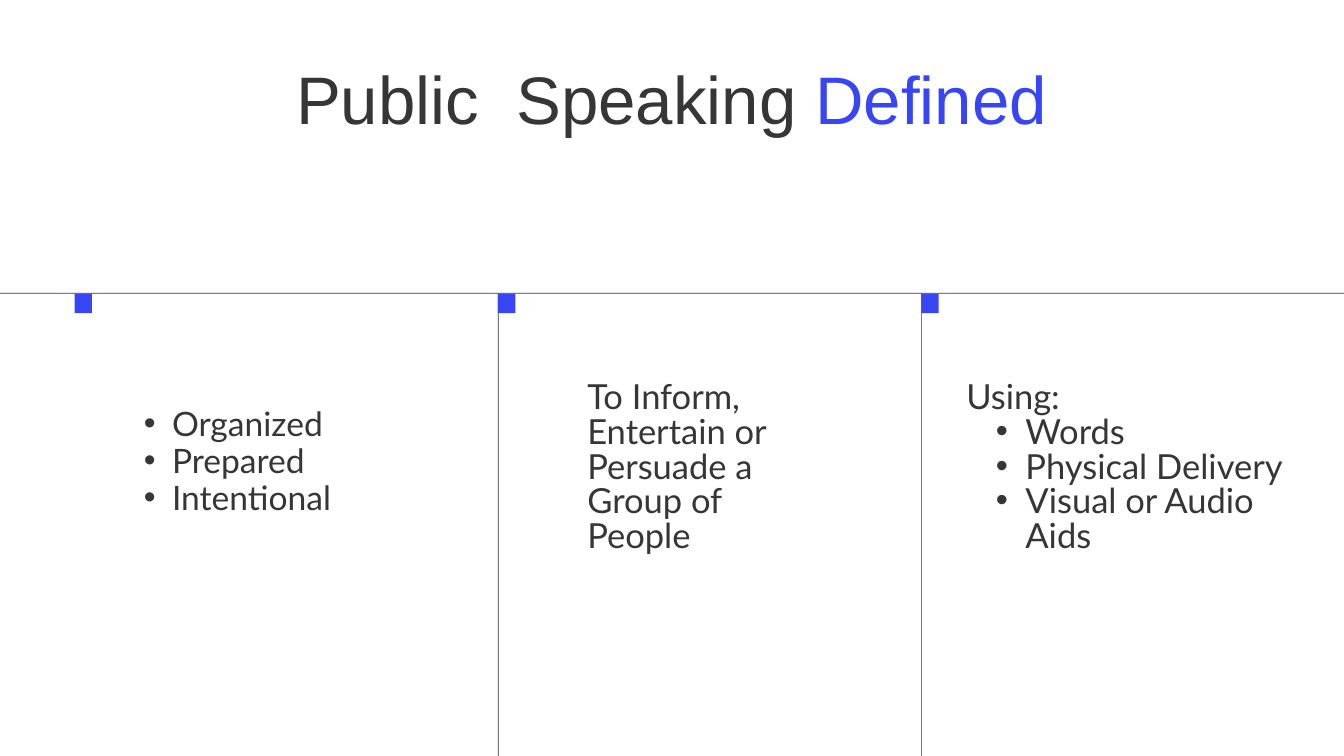
from lxml.etree import SubElement
from pptx import Presentation
from pptx.dml.color import RGBColor
from pptx.enum.shapes import MSO_SHAPE as Shape
from pptx.enum.text import MSO_AUTO_SIZE as AutoSize, PP_ALIGN as Align
from pptx.oxml.ns import qn
from pptx.util import Pt

PX = 9144  # EMU, 100 px to the inch
WIDTH, HEIGHT = 2000, 1125
INK = RGBColor(0x37, 0x36, 0x36)
BLUE = RGBColor(0x37, 0x45, 0xF4)

TITLE = [("Public  Speaking ", INK), ("Defined", BLUE)]
TITLE_BOX = (383, 96, 1233, 222)

# box, size (pt), line spacing (pt), bullet indent (px), [(line, is bulleted)]
COLUMNS = [
    ((172, 604, 568, 221), 36, 39.6, 42,
     [("Organized", True), ("Prepared", True), ("Intentional", True)]),
    ((874, 569, 335, 261), 37, 37, 0,
     [("To Inform, Entertain or Persuade a Group of People", False)]),
    ((1438, 569, 498, 312), 37, 37, 44,
     [("Using:", False), ("Words", True), ("Physical Delivery", True),
      ("Visual or Audio Aids", True)]),
]

RULE = 1
RULE_TOP = 436
COLUMN_TOP = RULE_TOP + RULE
FIRST_COLUMN, COLUMN_STEP = 111, 630
MARKER = (26, 29)


def emu(box):
    return [length * PX for length in box]


def add_block(slide, box, color):
    block = slide.shapes.add_shape(Shape.RECTANGLE, *emu(box))
    block.shadow.inherit = False
    block.fill.solid()
    block.fill.fore_color.rgb = color
    block.line.fill.background()


def add_frame(slide, box):
    """Add a wrapping text box without insets and return its text frame."""
    frame = slide.shapes.add_textbox(*emu(box)).text_frame
    frame.word_wrap = True
    frame.auto_size = AutoSize.SHAPE_TO_FIT_TEXT
    frame.margin_left = frame.margin_top = 0
    frame.margin_right = frame.margin_bottom = 0
    return frame


def add_bullet(paragraph, indent):
    paragraph.level = 1
    properties = paragraph._p.get_or_add_pPr()
    properties.set("marL", str(2 * indent * PX))
    properties.set("indent", str(-indent * PX))
    SubElement(properties, qn("a:buFont"), typeface="Arial")
    SubElement(properties, qn("a:buChar"), char="•")


def add_title(slide):
    heading = add_frame(slide, TITLE_BOX).paragraphs[0]
    heading.alignment = Align.CENTER
    heading.line_spacing = Pt(79.2)
    heading.font.size = Pt(72)
    heading.font.name = "Arial"
    for words, color in TITLE:
        run = heading.add_run()
        run.text = words
        run.font.size = Pt(72)
        run.font.name = "Arial"
        run.font.color.rgb = color


def add_column(slide, box, size, spacing, indent, lines):
    frame = add_frame(slide, box)
    frame.text = "\n".join(line for line, _ in lines)
    for paragraph, (_, bulleted) in zip(frame.paragraphs, lines):
        paragraph.line_spacing = Pt(spacing)
        if bulleted:
            add_bullet(paragraph, indent)
        paragraph.font.size = Pt(size)
        paragraph.font.name = "Lato"
        paragraph.font.color.rgb = INK


def main():
    deck = Presentation()
    deck.slide_width, deck.slide_height = WIDTH * PX, HEIGHT * PX
    slide = deck.slides.add_slide(deck.slide_layouts[6])

    add_title(slide)
    add_block(slide, (0, RULE_TOP, WIDTH, RULE), INK)
    lefts = [FIRST_COLUMN + i * COLUMN_STEP for i in range(len(COLUMNS))]
    for left in lefts[1:]:
        add_block(slide, (left, COLUMN_TOP, RULE, HEIGHT - COLUMN_TOP), INK)
    for left in lefts:
        add_block(slide, (left, COLUMN_TOP, *MARKER), BLUE)
    for column in COLUMNS:
        add_column(slide, *column)

    deck.save("out.pptx")


if __name__ == "__main__":
    main()
